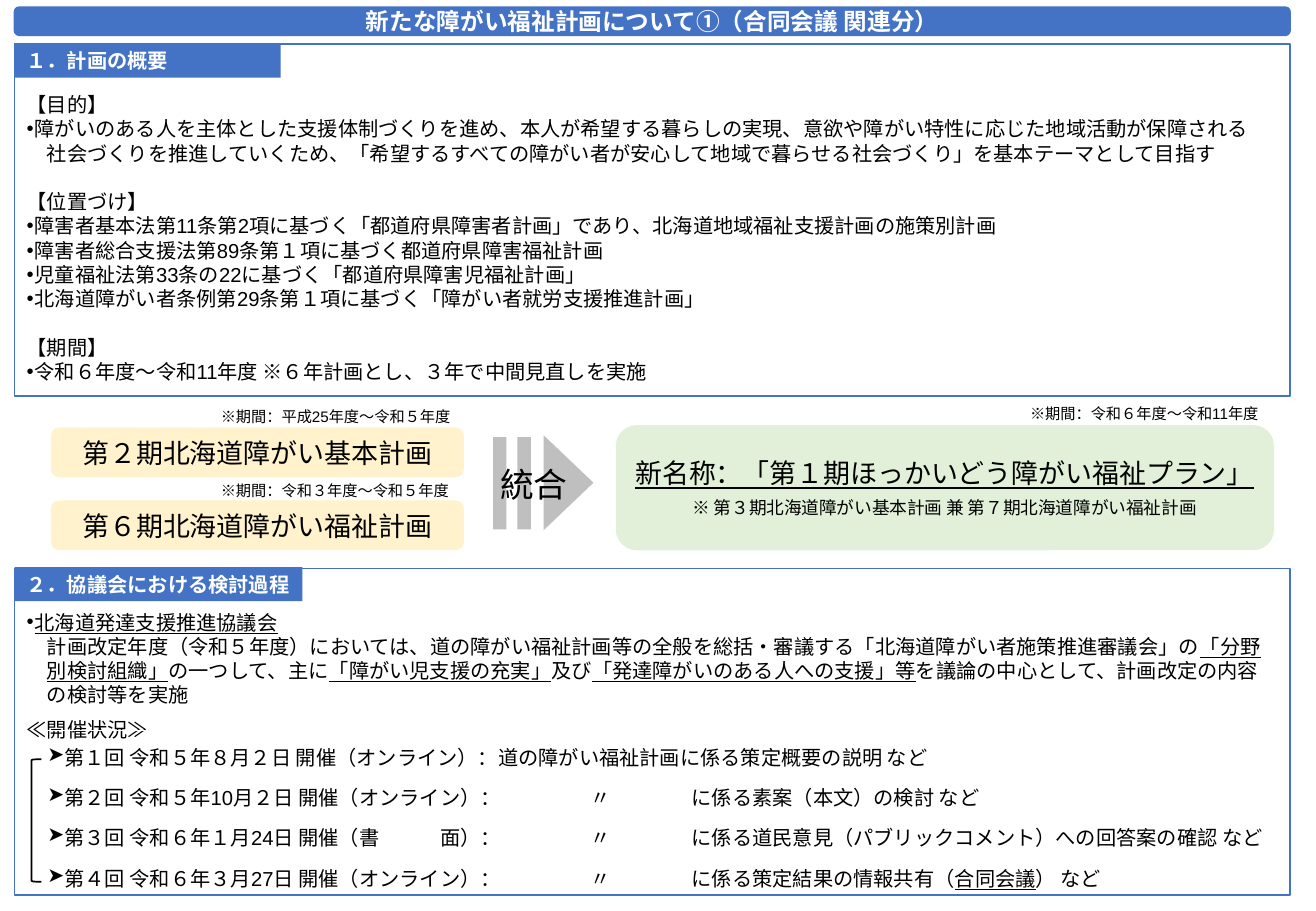
import pptx
import pptx.util
import pptx.dml.color
import pptx.enum.shapes
import pptx.enum.text
import pptx.oxml
import pptx.oxml.ns

Pt = pptx.util.Pt
FORM = pptx.enum.shapes.MSO_SHAPE
ANCHOR = pptx.enum.text.MSO_ANCHOR
ALIGN = pptx.enum.text.PP_ALIGN
COLORS = {"blue": "4472C4", "cream": "FFF2CC", "green": "E2F0D9",
          "gray": "BFBFBF", "black": "000000", "white": "FFFFFF"}
LEFT, WIDE = 8.64, 756
PITCH = 14.4

# text, bullet, left indent, space before
AIMS = [
    ("【目的】", "", 0, 0),
    ("障がいのある人を主体とした支援体制づくりを進め、本人が希望する暮らしの実現、"
     "意欲や障がい特性に応じた地域活動が保障される", "•", 4.7, 0),
    ("社会づくりを推進していくため、「希望するすべての障がい者が安心して地域で"
     "暮らせる社会づくり」を基本テーマとして目指す", "", 12, 0),
    ("【位置づけ】", "", 0, PITCH),
    ("障害者基本法第11条第2項に基づく「都道府県障害者計画」であり、"
     "北海道地域福祉支援計画の施策別計画", "•", 4.7, 0),
    ("障害者総合支援法第89条第１項に基づく都道府県障害福祉計画", "•", 4.7, 0),
    ("児童福祉法第33条の22に基づく「都道府県障害児福祉計画」", "•", 4.7, 0),
    ("北海道障がい者条例第29条第１項に基づく「障がい者就労支援推進計画」", "•", 4.7, 0),
    ("【期間】", "", 0, PITCH),
    ("令和６年度～令和11年度 ※６年計画とし、３年で中間見直しを実施", "•", 4.7, 0),
]
REVIEW = [
    ("|北海道発達支援推進協議会|", "•", 4.7, 0),
    ("計画改定年度（令和５年度）においては、道の障がい福祉計画等の全般を総括・審議する"
     "「北海道障がい者施策推進審議会」の|「分野\n別検討組織」|の一つして、主に"
     "|「障がい児支援の充実」|及び|「発達障がいのある人への支援」等|"
     "を議論の中心として、計画改定の内容\nの検討等を実施", "", 12, 0),
    ("≪開催状況≫", "", 0, 6),
]
ROUNDS = [
    ["第１回 令和５年８月２日 開催（オンライン）：道の障がい福祉計画に係る策定概要の説明 など"],
    ["第２回 令和５年10月２日 開催（オンライン）：", "〃", "に係る素案（本文）の検討 など"],
    ["第３回 令和６年１月24日 開催（書面）：", "〃",
     "に係る道民意見（パブリックコメント）への回答案の確認 など"],
    ["第４回 令和６年３月27日 開催（オンライン）：", "〃",
     "に係る策定結果の情報共有（|合同会議|） など"],
]


def paint(color):
    return pptx.dml.color.RGBColor.from_string(COLORS[color])


def style(para, size, face="Calibri", color="black", bold=False, align=ALIGN.LEFT):
    font = para.font
    font.size, font.name, font.bold = Pt(size), face, bold
    font.color.rgb = paint(color)
    para.alignment = align


def write(para, text):
    """Fill a paragraph; parts between bars are underlined."""
    for num, part in enumerate(text.split("|")):
        for row, line in enumerate(part.split("\n")):
            if row:
                para.add_line_break()
            if line:
                run = para.add_run()
                run.text = line
                if num % 2:
                    run.font.underline = True


def mark(para, sign, left, hang):
    """Set indents and the bullet, or no bullet if the sign is empty."""
    props = para._p.get_or_add_pPr()
    props.set("marL", str(int(Pt(left))))
    props.set("indent", str(-int(Pt(hang))))
    tag = f'a:buChar char="{sign}"' if sign else "a:buNone"
    bullet = pptx.oxml.parse_xml(f'<{tag} {pptx.oxml.ns.nsdecls("a")}/>')
    fonts = props.find(pptx.oxml.ns.qn("a:defRPr"))
    if fonts is None:
        props.append(bullet)
    else:
        fonts.addprevious(bullet)


def place(item, left, top, width, height):
    item.left, item.top = Pt(left), Pt(top)
    item.width, item.height = Pt(width), Pt(height)


def trim(frame, side=0, top=0):
    frame.margin_left = frame.margin_right = Pt(side)
    frame.margin_top, frame.margin_bottom = Pt(top), 0


def shape(slide, form, box, fill=None, line=None):
    item = slide.shapes.add_shape(form, *map(Pt, box))
    item.shadow.inherit = False
    if fill:
        item.fill.solid()
        item.fill.fore_color.rgb = paint(fill)
    else:
        item.fill.background()
    if line:
        item.line.color.rgb = paint(line)
        item.line.width = Pt(1)
    else:
        item.line.fill.background()
    return item


def panel(item, top, height, inset, rows, face):
    """Turn a body placeholder into a framed section."""
    place(item, LEFT, top, WIDE, height)
    item.line.color.rgb = paint("blue")
    item.line.width = Pt(1)
    frame = item.text_frame
    frame.auto_size = pptx.enum.text.MSO_AUTO_SIZE.NONE
    frame.vertical_anchor = ANCHOR.TOP
    trim(frame, 7.2, inset)
    for num, (text, sign, left, gap) in enumerate(rows):
        para = frame.add_paragraph() if num else frame.paragraphs[0]
        write(para, text)
        style(para, 12, face)
        para.line_spacing = Pt(PITCH)
        para.space_before, para.space_after = Pt(gap), 0
        mark(para, sign, left, left if sign else 0)


def tab(slide, top, width, text):
    item = shape(slide, FORM.RECTANGLE, (LEFT, top, width, 20.16), "blue")
    frame = item.text_frame
    frame.vertical_anchor = ANCHOR.MIDDLE
    trim(frame, 7.2)
    write(frame.paragraphs[0], text)
    style(frame.paragraphs[0], 12, color="white", bold=True)


def plan(slide, box, fill, *lines):
    """Add a rounded box with centred (text, size, space before) lines."""
    frame = shape(slide, FORM.ROUNDED_RECTANGLE, box, fill).text_frame
    frame.vertical_anchor = ANCHOR.MIDDLE
    trim(frame)
    for num, (text, size, gap) in enumerate(lines):
        para = frame.add_paragraph() if num else frame.paragraphs[0]
        write(para, text)
        style(para, size, align=ALIGN.CENTER)
        para.space_before = Pt(gap)


def note(slide, box, text, size=9, align=ALIGN.LEFT, anchor=ANCHOR.TOP):
    frame = slide.shapes.add_textbox(*map(Pt, box)).text_frame
    frame.word_wrap = True
    frame.vertical_anchor = anchor
    write(frame.paragraphs[0], text)
    style(frame.paragraphs[0], size, "Arial", align=align)


def arrow(slide):
    head = shape(slide, FORM.ISOSCELES_TRIANGLE, (308.9, 271.4, 56.2, 29.5), "gray")
    head.rotation = 90
    for num in range(2):
        shape(slide, FORM.RECTANGLE, (292.3 + 14.4 * num, 259.2, 7.9, 54.7), "gray")
    note(slide, (287.3, 262.8, 58.3, 48.2), "統合", 20, ALIGN.CENTER, ANCHOR.MIDDLE)


def rounds(slide):
    """List the meetings in a plain grid beside a bracket."""
    widths = 274, 108, 346
    grid = slide.shapes.add_table(4, 3, Pt(28), Pt(433), Pt(sum(widths)), Pt(96)).table
    grid.first_row = grid.horz_banding = False
    for col, width in zip(grid.columns, widths):
        col.width = Pt(width)
    for row in range(4):
        for col in range(3):
            cell = grid.cell(row, col)
            cell.fill.background()
            cell.vertical_anchor = ANCHOR.BOTTOM
            trim(cell)
            para = cell.text_frame.paragraphs[0]
            write(para, "".join(ROUNDS[row][col:col + 1]))
            style(para, 12, "Arial", align=ALIGN.CENTER if col == 1 else ALIGN.LEFT)
            para.line_spacing = Pt(PITCH)
            if col == 0:
                mark(para, "➤", 10.2, 10.2)
    grid.cell(0, 0).merge(grid.cell(0, 2))
    spread(grid.cell(2, 0).text_frame.paragraphs[0])
    shape(slide, FORM.LEFT_BRACKET, (18.7, 450, 5.8, 72.7), line="black")


def spread(para):
    """Widen 書面 to the width of オンライン by letter spacing."""
    start, end = para.runs[0].text.split("書")
    para.runs[0].text = start
    for text in ("書", end):
        para.add_run().text = text
    para.runs[1]._r.get_or_add_rPr().set("spc", "3600")


def main():
    deck = pptx.Presentation()
    deck.slide_width, deck.slide_height = Pt(780), Pt(540)
    slide = deck.slides.add_slide(deck.slide_layouts[3])
    title, aims, review = slide.placeholders

    box = LEFT, 4.3, WIDE, 16.6
    bar = shape(slide, FORM.ROUNDED_RECTANGLE, box, "blue", "blue")
    title._element.addprevious(bar._element)
    place(title, *box)
    frame = title.text_frame
    frame.auto_size = pptx.enum.text.MSO_AUTO_SIZE.NONE
    frame.vertical_anchor = ANCHOR.MIDDLE
    trim(frame)
    write(frame.paragraphs[0], "新たな障がい福祉計画について①（合同会議 関連分）")
    style(frame.paragraphs[0], 14, color="white", bold=True, align=ALIGN.CENTER)

    panel(aims, 25.9, 208.8, 28.8, AIMS, "Arial")
    tab(slide, 25.9, 157.7, "１．計画の概要")
    panel(review, 337, 193.7, 24.5, REVIEW, "Calibri")
    tab(slide, 336.2, 170.6, "２．協議会における検討過程")
    rounds(slide)

    plan(slide, (30.2, 253.4, 244.8, 29.5), "cream", ("第２期北海道障がい基本計画", 16, 0))
    plan(slide, (30.2, 296.6, 244.8, 29.5), "cream", ("第６期北海道障がい福祉計画", 16, 0))
    plan(slide, (365, 252, 390.2, 74.2), "green",
         ("|新名称：「第１期ほっかいどう障がい福祉プラン」|", 16, 0),
         ("※ 第３期北海道障がい基本計画 兼 第７期北海道障がい福祉計画", 10.5, 4.8))
    arrow(slide)
    note(slide, (123.8, 237.6, 159.8, 15.8), "※期間：平成25年度～令和５年度")
    note(slide, (123.8, 281.5, 159.8, 13.7), "※期間：令和３年度～令和５年度")
    note(slide, (603.4, 236.2, 157, 16.6), "※期間：令和６年度～令和11年度")
    deck.save("out.pptx")


if __name__ == "__main__":
    main()
